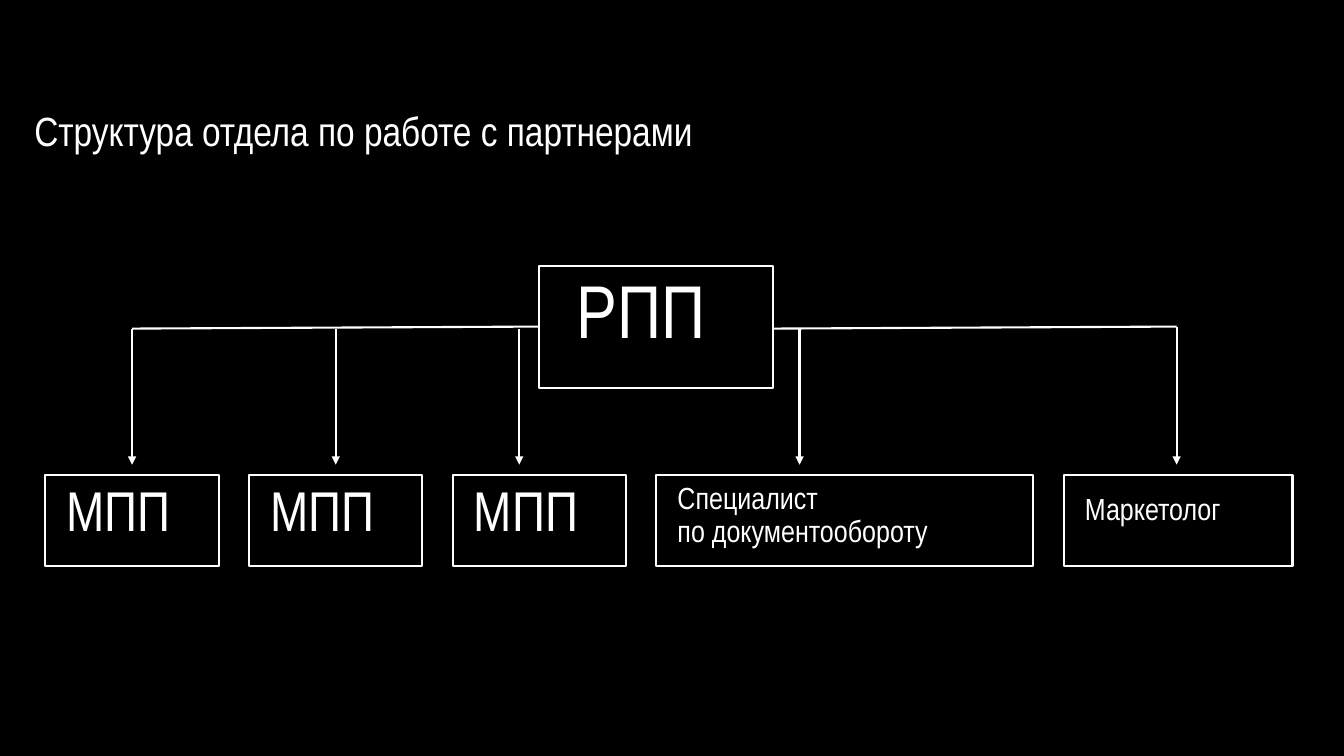
from dataclasses import dataclass

from lxml import etree
from pptx import Presentation
from pptx.dml.color import RGBColor
from pptx.enum.shapes import MSO_CONNECTOR, MSO_SHAPE
from pptx.enum.text import MSO_ANCHOR, PP_ALIGN
from pptx.oxml.ns import qn
from pptx.util import Inches, Pt

RECTANGLE = MSO_SHAPE.RECTANGLE
STRAIGHT = MSO_CONNECTOR.STRAIGHT
TOP = MSO_ANCHOR.TOP
LEFT = PP_ALIGN.LEFT

TITLE = "Структура отдела по работе с партнерами"
HEAD = "РПП"
# text, box width, label width, label height, label drop, size name, arrow position
ROLES = [
    ("МПП", 1.72, 1.97, 0.71, 0.05, "role", 1.31),
    ("МПП", 1.72, 1.97, 0.71, 0.05, "role", 3.33),
    ("МПП", 1.72, 1.97, 0.71, 0.05, "role", 5.15),
    ("Специалист\nпо документообороту", 3.74, 3.64, 1.06, 0.05, "small", 7.93),
    ("Маркетолог", 2.27, 2.22, 0.56, 0.16, "small", 11.67),
]


@dataclass
class Theme:
    font: str = "Arial Narrow"
    ground: RGBColor = RGBColor(0x00, 0x00, 0x00)
    ink: RGBColor = RGBColor(0xFF, 0xFF, 0xFF)
    title: float = 29.1
    head: float = 53.4
    role: float = 40
    small: float = 21.8
    line: float = 1.5


theme = Theme()
HEAD_LEFT, HEAD_TOP, HEAD_WIDTH, HEAD_HEIGHT = 5.35, 2.64, 2.32, 1.21
ROW_LEFT, ROW_TOP, ROW_HEIGHT, ROW_GAP = 0.45, 4.71, 0.91, 0.3
LABEL_INDENT = 0.15
BAR_HIGH, BAR_LOW, ARROW_END = 3.24, 3.26, 4.61


def add_label(page, text, left, top, width, height, size):
    box = page.shapes.add_textbox(Inches(left), Inches(top), Inches(width), Inches(height))
    frame = box.text_frame
    frame.word_wrap = True
    frame.vertical_anchor = TOP
    frame.margin_left = frame.margin_right = Inches(0.06)
    frame.margin_top = frame.margin_bottom = Inches(0.03)
    frame.text = text
    for para in frame.paragraphs:
        para.alignment = LEFT
        para.line_spacing = 0.9
        for span in para.runs:
            span.font.name = theme.font
            span.font.size = Pt(size)
            span.font.color.rgb = theme.ink


def add_frame(page, left, top, width, height):
    box = page.shapes.add_shape(
        RECTANGLE, Inches(left), Inches(top), Inches(width), Inches(height))
    box.shadow.inherit = False
    box.fill.background()
    box.line.color.rgb = theme.ink
    box.line.width = Pt(theme.line)


def add_line(page, start, end, arrow=False):
    line = page.shapes.add_connector(STRAIGHT, *map(Inches, start + end))
    line.line.color.rgb = theme.ink
    line.line.width = Pt(theme.line)
    if arrow:
        outline = line.line._get_or_add_ln()
        etree.SubElement(outline, qn("a:tailEnd"), type="triangle")
    etree.SubElement(line._element.spPr, qn("a:effectLst"))


def main():
    deck = Presentation()
    deck.slide_width, deck.slide_height = Inches(13.33), Inches(7.5)
    page = deck.slides.add_slide(deck.slide_layouts[6])
    page.background.fill.solid()
    page.background.fill.fore_color.rgb = theme.ground

    add_label(page, TITLE, 0.28, 1.07, 10.42, 0.72, theme.title)
    add_label(page, HEAD, 5.66, 2.69, 1.97, 0.71, theme.head)
    add_frame(page, HEAD_LEFT, HEAD_TOP, HEAD_WIDTH, HEAD_HEIGHT)

    left = ROW_LEFT
    for text, width, label_width, label_height, drop, size, _ in ROLES:
        add_label(page, text, left + LABEL_INDENT, ROW_TOP + drop,
                  label_width, label_height, getattr(theme, size))
        add_frame(page, left, ROW_TOP, width, ROW_HEIGHT)
        left += width + ROW_GAP

    arrows = [role[-1] for role in ROLES]
    add_line(page, (HEAD_LEFT, BAR_HIGH), (arrows[0], BAR_LOW))
    add_line(page, (arrows[-1], BAR_HIGH), (HEAD_LEFT + HEAD_WIDTH, BAR_LOW))
    for across in arrows:
        start = BAR_HIGH if across == arrows[-1] else BAR_LOW
        add_line(page, (across, start), (across, ARROW_END), arrow=True)

    deck.save("out.pptx")


if __name__ == "__main__":
    main()
